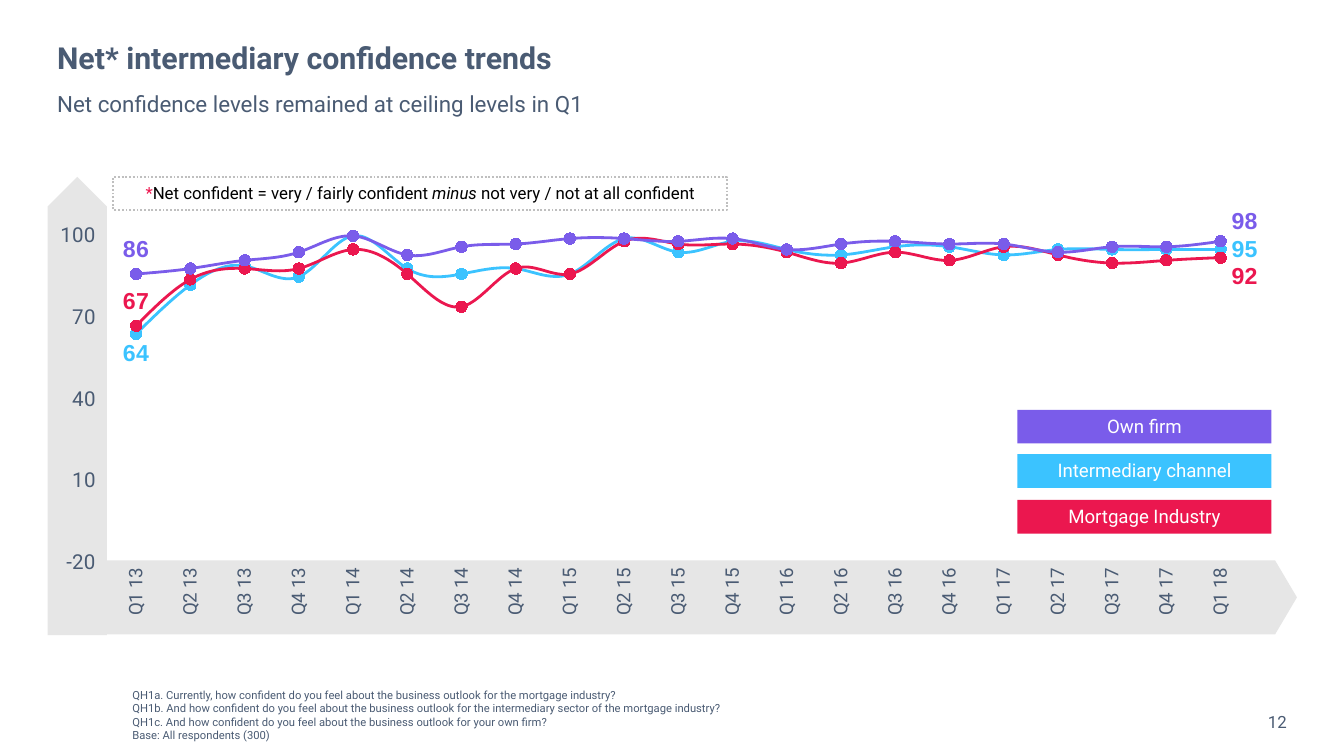
from dataclasses import dataclass

from lxml import etree
from pptx import Presentation
from pptx.chart.data import CategoryChartData
from pptx.dml.color import RGBColor
from pptx.enum.chart import (XL_AXIS_CROSSES, XL_CHART_TYPE, XL_LABEL_POSITION,
                             XL_MARKER_STYLE, XL_TICK_MARK)
from pptx.enum.dml import MSO_LINE
from pptx.enum.shapes import MSO_SHAPE
from pptx.enum.text import MSO_ANCHOR, MSO_AUTO_SIZE, PP_ALIGN
from pptx.oxml.ns import qn
from pptx.util import Inches, Pt

LEFT, CENTER, RIGHT = PP_ALIGN.LEFT, PP_ALIGN.CENTER, PP_ALIGN.RIGHT
TOP, MIDDLE = MSO_ANCHOR.TOP, MSO_ANCHOR.MIDDLE
ABOVE, BELOW = XL_LABEL_POSITION.ABOVE, XL_LABEL_POSITION.BELOW
BESIDE = XL_LABEL_POSITION.RIGHT
NO_TICK, TICK_OUT = XL_TICK_MARK.NONE, XL_TICK_MARK.OUTSIDE

FONT, LABEL_FONT = "Roboto", "Arial"
COLORS = {
    "text": "4A5B73", "band": "E6E6E6", "border": "BFBFBF", "black": "000000",
    "white": "FFFFFF", "star": "ED174F",
    "channel": "3BC3FF", "industry": "EB174F", "firm": "7A5CEA",
}


@dataclass
class Trend:
    """One line of the chart; label shifts are shares of the chart height."""
    name: str
    color: str
    values: tuple[int, ...]
    first_label: XL_LABEL_POSITION
    first_shift: float
    last_shift: float
    key_top: float


TRENDS = [
    Trend("Intermediary channel", "channel",
          (64, 82, 89, 85, 100, 88, 86, 88, 86, 99, 94, 98, 95, 93, 96, 96, 93, 95, 95, 95, 95),
          BELOW, -0.01, 0, 3.38),
    Trend("Mortgage Industry", "industry",
          (67, 84, 88, 88, 95, 86, 74, 88, 86, 98, 97, 97, 94, 90, 94, 91, 96, 93, 90, 91, 92),
          ABOVE, 0, 0.04, 3.72),
    Trend("Own firm", "firm",
          (86, 88, 91, 94, 100, 93, 96, 97, 99, 99, 98, 99, 95, 97, 98, 97, 97, 94, 96, 96, 98),
          ABOVE, 0, -0.04, 3.05),
]
QUARTERS = [f"Q{i % 4 + 1} {13 + i // 4}" for i in range(21)]
FOOTNOTES = [
    "QH1a. Currently, how confident do you feel about the business outlook for the mortgage industry?",
    "QH1b. And how confident do you feel about the business outlook for the intermediary sector of the mortgage industry?",
    "QH1c. And how confident do you feel about the business outlook for your own firm?",
    "Base: All respondents (300)",
]


def rgb(color: str) -> RGBColor:
    return RGBColor.from_string(COLORS[color])


def set_font(font, size: float, color: str, name: str = FONT, bold: bool = False) -> None:
    font.size, font.name, font.bold = Pt(size), name, bold
    font.color.rgb = rgb(color)


def place(shape, left: float, top: float, width: float, height: float) -> None:
    shape.left, shape.top = Inches(left), Inches(top)
    shape.width, shape.height = Inches(width), Inches(height)


def write(shape, lines: list[str], size: float, color: str = "text",
          align=LEFT, anchor=MIDDLE, bold: bool = False) -> None:
    frame = shape.text_frame
    frame.word_wrap = True
    frame.auto_size = MSO_AUTO_SIZE.NONE
    frame.vertical_anchor = anchor
    frame.margin_left = frame.margin_right = Pt(5.4)
    frame.margin_top = frame.margin_bottom = Pt(2.7)
    frame.text = "\n".join(lines)
    for paragraph in frame.paragraphs:
        paragraph.alignment = align
        set_font(paragraph.font, size, color, bold=bold)


def add_block(slide, kind, left: float, top: float, width: float, height: float,
              fill: str | None = None):
    block = slide.shapes.add_shape(kind, Inches(left), Inches(top), Inches(width), Inches(height))
    block.shadow.inherit = False
    block.line.fill.background()
    if fill:
        block.fill.solid()
        block.fill.fore_color.rgb = rgb(fill)
    else:
        block.fill.background()
    return block


def add_text(slide, lines: list[str], size: float, left: float, top: float,
             width: float, height: float, align=LEFT, anchor=MIDDLE) -> None:
    box = slide.shapes.add_textbox(Inches(left), Inches(top), Inches(width), Inches(height))
    write(box, lines, size, align=align, anchor=anchor)


def manual_layout(**values):
    """Build a c:layout element from its child names and values."""
    layout = etree.Element(qn("c:layout"))
    manual = etree.SubElement(layout, qn("c:manualLayout"))
    for tag, value in values.items():
        etree.SubElement(manual, qn(f"c:{tag}")).set("val", str(value))
    return layout


def style_axis(axis, size: float, tick) -> None:
    axis.has_major_gridlines = False
    axis.major_tick_mark, axis.minor_tick_mark = tick, NO_TICK
    axis.format.line.fill.background()
    set_font(axis.tick_labels.font, size, "text")


def style_series(series, trend: Trend) -> None:
    series.smooth = True
    series.format.line.width = Pt(1.5)
    series.format.line.color.rgb = rgb(trend.color)
    series.marker.style, series.marker.size = XL_MARKER_STYLE.CIRCLE, 6
    series.marker.format.fill.solid()
    series.marker.format.fill.fore_color.rgb = rgb(trend.color)
    series.marker.format.line.color.rgb = rgb(trend.color)
    series.data_labels.show_value = False
    for index, position in ((0, trend.first_label), (len(QUARTERS) - 1, BESIDE)):
        label = series.points[index].data_label
        set_font(label.font, 12.4, trend.color, LABEL_FONT, bold=True)
        label.position = position


def add_trend_chart(slide) -> None:
    data = CategoryChartData()
    data.categories = QUARTERS
    for trend in TRENDS:
        data.add_series(trend.name, trend.values)
    chart = slide.shapes.add_chart(XL_CHART_TYPE.LINE_MARKERS, Inches(0.05), Inches(1.32),
                                   Inches(9.52), Inches(3.63), data).chart
    chart.has_legend = chart.has_title = False
    set_font(chart.font, 12.4, "text", LABEL_FONT, bold=True)
    chart.plots[0].vary_by_categories = False

    scale = chart.value_axis
    scale.minimum_scale, scale.maximum_scale, scale.major_unit = -20, 100, 30
    scale.crosses = XL_AXIS_CROSSES.MINIMUM
    style_axis(scale, 11, TICK_OUT)
    style_axis(chart.category_axis, 10, NO_TICK)
    chart.category_axis.tick_labels.offset = 0
    label_body = chart.element.xpath(".//c:catAx/c:txPr/a:bodyPr")[0]
    label_body.set("rot", "-5400000")
    label_body.set("vert", "horz")

    plot_area = chart.element.xpath(".//c:plotArea")[0]
    for layout in plot_area.findall(qn("c:layout")):
        plot_area.remove(layout)
    plot_area.insert(0, manual_layout(layoutTarget="inner", xMode="edge", yMode="edge",
                                      x=0.08, y=0.12, w=0.89, h=0.67))

    for series, trend in zip(chart.plots[0].series, TRENDS):
        style_series(series, trend)
    shifts = [shift for trend in TRENDS for shift in (trend.first_shift, trend.last_shift)]
    for label, shift in zip(chart.element.xpath(".//c:dLbl"), shifts):
        if shift:
            label.insert(1, manual_layout(x=0, y=shift))


def add_definition(slide) -> None:
    box = add_block(slide, MSO_SHAPE.RECTANGLE, 0.84, 1.32, 4.57, 0.24)
    box.line.color.rgb = rgb("border")
    box.line.width = Pt(1)
    box.line.dash_style = MSO_LINE.ROUND_DOT
    write(box, [""], 9, "black", CENTER, TOP)
    paragraph = box.text_frame.paragraphs[0]
    star, start, minus, end = (paragraph.add_run() for _ in range(4))
    star.text = "*"
    star.font.color.rgb = rgb("star")
    start.text = "Net confident = very / fairly confident "
    minus.text = "minus"
    minus.font.italic = True
    end.text = " not very / not at all confident"


def main() -> None:
    prs = Presentation()
    prs.slide_width = Inches(10)
    prs.slide_height = prs.slide_width * 9 // 16
    slide = prs.slides.add_slide(prs.slide_layouts.get_by_name("Title Only"))

    time_band = add_block(slide, MSO_SHAPE.PENTAGON, 0.56, 4.17, 9.09, 0.55, "band")
    time_band.adjustments[0] = 0.295
    scale_band = add_block(slide, MSO_SHAPE.PENTAGON, -1.13, 2.8, 3.41, 0.44, "band")
    scale_band.rotation = 270

    title = slide.shapes.title
    place(title, 0.35, 0.29, 9.29, 0.31)
    write(title, ["Net* intermediary confidence trends"], 16.2, bold=True)
    title.text_frame.paragraphs[0].line_spacing = 0.9
    add_text(slide, ["Net confidence levels remained at ceiling levels in Q1"], 12,
             0.35, 0.63, 9.29, 0.3, anchor=TOP)
    add_text(slide, FOOTNOTES, 6, 0.91, 5.2, 7.95, 0.24)
    add_text(slide, ["12"], 9, 8.94, 5.25, 0.71, 0.24, RIGHT)

    add_trend_chart(slide)
    for trend in TRENDS:
        key = add_block(slide, MSO_SHAPE.RECTANGLE, 7.57, trend.key_top, 1.89, 0.25, trend.color)
        write(key, [trend.name], 10, "white", CENTER, TOP)
    add_definition(slide)
    prs.save("out.pptx")


if __name__ == "__main__":
    main()
